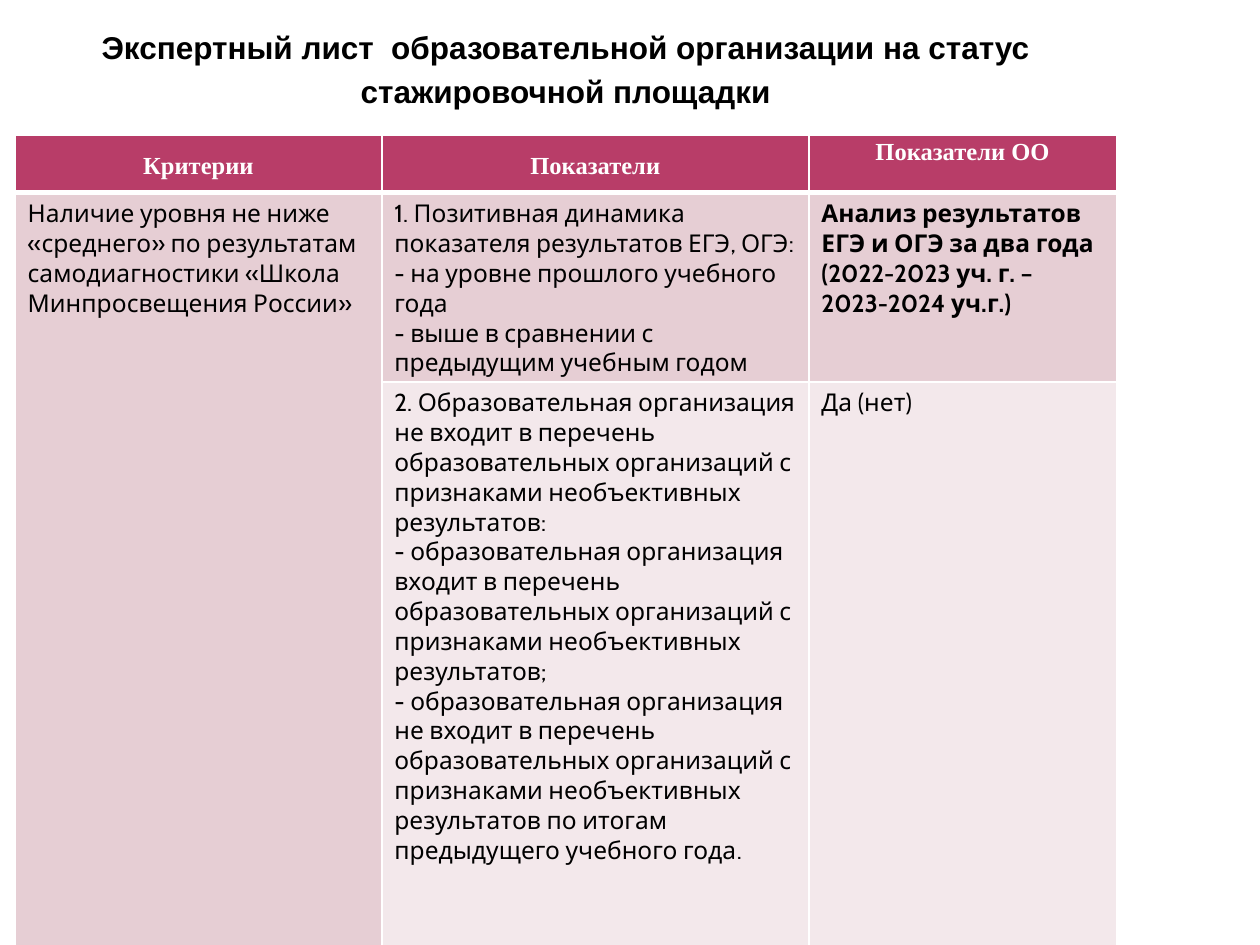
from dataclasses import dataclass

from lxml import etree
from pptx import Presentation
from pptx import util as u
from pptx.dml.color import RGBColor
from pptx.enum import text as t
from pptx.oxml.ns import qn


@dataclass(frozen=True)
class Theme:
    white: str = "FFFFFF"
    black: str = "000000"
    head: str = "B83D68"
    dark: str = "E6CED4"
    light: str = "F3E8EB"
    title_font: str = "Arial"
    head_font: str = "Times New Roman"
    body_font: str = "Cabin"
    title_size: int = 18
    size: int = 14


theme = Theme()

TITLE = "Экспертный лист  образовательной организации на статус стажировочной площадки"
HEADS = ["Критерии", "Показатели", "Показатели ОО"]
# Each cell is a list of paragraphs
ROWS = [
    [
        ["Наличие уровня не ниже «среднего» по результатам самодиагностики "
         "«Школа Минпросвещения России»"],
        ["1. Позитивная динамика показателя результатов ЕГЭ, ОГЭ:",
         "- на уровне прошлого учебного года",
         "- выше в сравнении с предыдущим учебным годом"],
        ["Анализ результатов ЕГЭ и ОГЭ за два года",
         "(2022-2023 уч. г. – 2023-2024 уч.г.)"],
    ],
    [
        [],
        ["2. Образовательная организация не входит в перечень образовательных "
         "организаций с признаками необъективных результатов:",
         "- образовательная организация входит в перечень образовательных "
         "организаций с признаками необъективных результатов;",
         "- образовательная организация не входит в перечень образовательных "
         "организаций с признаками необъективных результатов по итогам "
         "предыдущего учебного года."],
        ["Да (нет)"],
    ],
]
COLS = [2.91, 3.39, 2.44]
HEIGHTS = [0.46, 1.49, 4.49]


def write(frame, lines, color, font, para=None):
    """Fill a text frame with one paragraph per line."""
    for i, line in enumerate(lines):
        p = frame.paragraphs[0] if i == 0 else frame.add_paragraph()
        p.add_run().text = line
        for name, value in (para or {}).items():
            setattr(p, name, value)
        for name, value in font.items():
            setattr(p.runs[0].font, name, value)
        p.runs[0].font.color.rgb = RGBColor.from_string(color)


def set_edges(cell, widths):
    """Draw white cell borders; widths are in points by side."""
    props = cell._tc.get_or_add_tcPr()
    for side, width in widths.items():
        line = etree.SubElement(props, qn(f"a:ln{side}"), w=str(u.Pt(width)))
        fill = etree.SubElement(line, qn("a:solidFill"))
        etree.SubElement(fill, qn("a:srgbClr"), val=theme.white)


def add_title(slide, left, top, width, height):
    title = slide.shapes.title
    box = dict(left=left, top=top, width=width, height=height)
    for name, value in box.items():
        setattr(title, name, u.Inches(value))
    frame = title.text_frame
    form = dict(word_wrap=True, vertical_anchor=t.MSO_ANCHOR.TOP,
                auto_size=t.MSO_AUTO_SIZE.SHAPE_TO_FIT_TEXT)
    for name, value in form.items():
        setattr(frame, name, value)
    write(frame, [TITLE], theme.black,
          dict(name=theme.title_font, size=u.Pt(theme.title_size), bold=True),
          dict(alignment=t.PP_ALIGN.CENTER, line_spacing=1.15,
               space_after=u.Pt(10)))


def add_grid(slide, left, top):
    box = [u.Inches(n) for n in (left, top, sum(COLS), sum(HEIGHTS))]
    table = slide.shapes.add_table(len(HEIGHTS), len(COLS), *box).table
    for col, width in zip(table.columns, COLS):
        col.width = u.Inches(width)
    for row, height in zip(table.rows, HEIGHTS):
        row.height = u.Inches(height)

    # Header row
    inset = dict(margin_left=u.Inches(0.07), margin_right=u.Inches(0.07),
                 margin_top=0, margin_bottom=0)
    for c, head in enumerate(HEADS):
        cell = table.cell(0, c)
        set_edges(cell, dict(L=1, R=1, T=1, B=3))
        for name, value in inset.items():
            setattr(cell, name, value)
        last = c == len(HEADS) - 1
        cell.vertical_anchor = t.MSO_ANCHOR.TOP if last else t.MSO_ANCHOR.MIDDLE
        cell.fill.solid()
        cell.fill.fore_color.rgb = RGBColor.from_string(theme.head)
        write(cell.text_frame, [head], theme.white,
              dict(name=theme.head_font, size=u.Pt(theme.size), bold=True),
              dict(alignment=t.PP_ALIGN.CENTER, line_spacing=1.15))

    # Body rows: the criterion spans both
    table.cell(1, 0).merge(table.cell(2, 0))
    for r, row in enumerate(ROWS, 1):
        for c, lines in enumerate(row):
            cell = table.cell(r, c)
            set_edges(cell, dict(L=1, R=1, T=3 if r == 1 else 1, B=1))
            cell.fill.solid()
            shade = theme.dark if r == 1 or c == 0 else theme.light
            cell.fill.fore_color.rgb = RGBColor.from_string(shade)
            write(cell.text_frame, lines, theme.black,
                  dict(name=theme.body_font, size=u.Pt(theme.size),
                       bold=(r, c) == (1, 2)))


def main():
    deck = Presentation()
    deck.slide_width, deck.slide_height = u.Inches(10), u.Inches(7.5)
    slide = deck.slides.add_slide(deck.slide_layouts[5])
    add_title(slide, 0.12, 0.13, sum(COLS), 0.8)
    add_grid(slide, 0.12, 1.07)
    deck.save("out.pptx")


if __name__ == "__main__":
    main()
